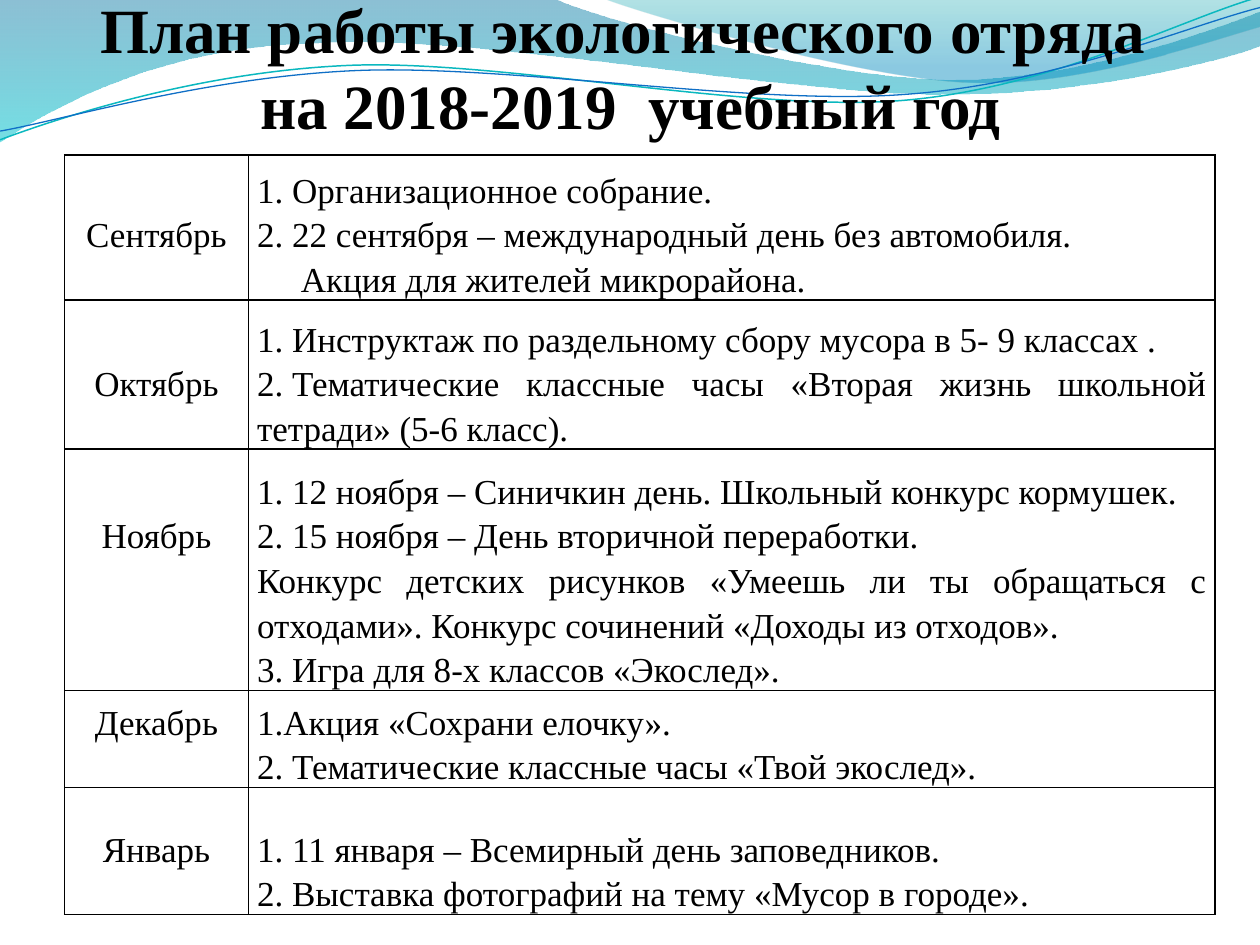
from lxml import etree
from pptx import Presentation
from pptx.dml.color import RGBColor
from pptx.enum import text
from pptx.oxml import ns
from pptx.util import Pt

COLORS = {
    "ink": "000000",
    "paper": "FFFFFF",
    "wave_blue": "0074A1",
    "wave_aqua": "00C6CF",
    "crest_teal": "00A1A9",
    "crest_blue": "008BBF",
    "line_aqua": "0AB8BF",
    "line_blue": "0F6FC6",
}
FONT = "Times New Roman"
BODY_LINE = 25.5
HARD_SPACE = chr(160)

WAVE = [
    (0, 0), (316.8, -0.7),
    (342.7, 12.2, 478.1, 45.4, 545.8, 45.4),
    (614.2, 45.4, 689.8, 18.7, 720, 6.5),
    (720.7, 25.9),
    (707.8, 31.7, 626.4, 54.7, 537.1, 54),
    (447.8, 54, 275, 20.2, 185, 24.5),
    (92.9, 25.9, 33.1, 59.8, -0.7, 81.4),
]
CREST = [
    (344.9, -0.7),
    (366.5, 7.9, 491, 44.6, 553.7, 46.8),
    (616.3, 49.7, 691.9, 23, 720, 15.1),
    (720, 0),
]
AQUA_LINE = [
    (0, 79.9),
    (34.6, 67, 113.8, 41, 199.4, 37.4),
    (284.4, 33.8, 427, 64.1, 513.4, 57.6),
    (599.8, 51.1, 675.4, 10.8, 718.6, -1.4),
]
BLUE_LINE = [
    (0, 74.9),
    (33.8, 69.1, 118.1, 43.9, 203.8, 40.3),
    (290.2, 36.7, 429.8, 60.5, 516.2, 54),
    (601.9, 48.2, 677.5, 15.1, 720, 4.3),
]

COLUMN_WIDTHS = [105, 552.5]
PLAN = [
    ("Сентябрь", 82.9, 1, [
        "1. Организационное собрание.",
        "2. 22 сентября – международный день без автомобиля.",
        ("Акция для жителей микрорайона.", 25),
    ]),
    ("Октябрь", 85.1, 1, [
        "1. Инструктаж по раздельному сбору мусора в 5- 9 классах .",
        "2. Тематические классные часы «Вторая жизнь школьной тетради» (5-6 класс).",
    ]),
    ("Ноябрь", 137.9, 3, [
        "1. 12 ноября – Синичкин день. Школьный конкурс кормушек.",
        "2. 15 ноября – День вторичной переработки.",
        "Конкурс детских рисунков «Умеешь ли ты обращаться с отходами». "
        "Конкурс сочинений «Доходы из отходов».",
        "3. Игра для 8-х классов «Экослед».",
    ]),
    ("Декабрь", 55.4, 1, [
        "1.Акция «Сохрани елочку».",
        "2. Тематические классные часы «Твой экослед».",
    ]),
    ("Январь", 72.6, 1, [
        "1. 11 января – Всемирный день заповедников.",
        "2. Выставка фотографий на тему «Мусор в городе».",
    ]),
]


def color(name):
    return RGBColor.from_string(COLORS[name])


def write(frame, content, first=False, size=20, bold=False, align="CENTER",
          spacing=1.0, indent=0):
    paragraph = frame.paragraphs[0] if first else frame.add_paragraph()
    paragraph.alignment = getattr(text.PP_ALIGN, align)
    paragraph.line_spacing = spacing
    paragraph.space_before = Pt(0)
    if indent:
        properties = paragraph._p.get_or_add_pPr()
        properties.set("marL", str(Pt(indent)))
        properties.set("indent", "0")
    run = paragraph.add_run()
    run.text = content
    run.font.name = FONT
    run.font.size = Pt(size)
    run.font.bold = bold
    run.font.color.rgb = color("ink")


def join_number(content):
    if content[0].isdigit():
        return content.replace(". ", "." + HARD_SPACE, 1)
    return content


def add_outline(slide, outline, close):
    ends = [(Pt(segment[-2]), Pt(segment[-1])) for segment in outline]
    builder = slide.shapes.build_freeform(*ends[0])
    builder.add_line_segments(ends[1:], close=close)
    shape = builder.convert_to_shape()
    shape.shadow.inherit = False
    lines = list(shape.element.iter(ns.qn("a:lnTo")))
    for line, segment in zip(lines, outline[1:]):
        if len(segment) == 6:
            line.tag = ns.qn("a:cubicBezTo")
            line.clear()
            for x, y in zip(segment[::2], segment[1::2]):
                etree.SubElement(line, ns.qn("a:pt"),
                                 x=str(Pt(x) - builder.shape_offset_x),
                                 y=str(Pt(y) - builder.shape_offset_y))
    return shape


def add_wave(slide, outline, stops):
    shape = add_outline(slide, outline, True)
    shape.line.fill.background()
    shape.fill.gradient()
    shape.fill.gradient_angle = 270
    for stop, (position, name, opacity) in zip(shape.fill.gradient_stops, stops):
        stop.position = position
        stop.color.rgb = color(name)
        for element in shape.element.iter(ns.qn("a:srgbClr")):
            if element.get("val") == COLORS[name]:
                etree.SubElement(element, ns.qn("a:alpha"), val=str(opacity * 1000))


def add_wave_line(slide, outline, name, width):
    shape = add_outline(slide, outline, False)
    shape.fill.background()
    shape.line.color.rgb = color(name)
    shape.line.width = Pt(width)


def format_cell(cell, bottom=0):
    cell.margin_left = cell.margin_right = Pt(5)
    cell.margin_top = 0
    cell.margin_bottom = Pt(bottom)
    cell.vertical_anchor = text.MSO_ANCHOR.BOTTOM
    properties = cell._tc.get_or_add_tcPr()
    for side in ("lnL", "lnR", "lnT", "lnB"):
        border = etree.SubElement(properties, ns.qn("a:" + side), w=str(Pt(1)))
        fill = etree.SubElement(border, ns.qn("a:solidFill"))
        etree.SubElement(fill, ns.qn("a:srgbClr"), val=COLORS["ink"])
    cell.fill.solid()
    cell.fill.fore_color.rgb = color("paper")


def add_plan(slide):
    height = sum(row[1] for row in PLAN)
    table = slide.shapes.add_table(len(PLAN), 2, Pt(36.9), Pt(88.6),
                                   Pt(sum(COLUMN_WIDTHS)), Pt(height)).table
    table.first_row = table.horz_banding = False
    for column, width in zip(table.columns, COLUMN_WIDTHS):
        column.width = Pt(width)
    for row, (month, row_height, lines_below, events) in zip(table.rows, PLAN):
        row.height = Pt(row_height)
        month_cell, events_cell = row.cells
        format_cell(month_cell, lines_below * BODY_LINE)
        write(month_cell.text_frame, month, first=True, spacing=1.15)
        format_cell(events_cell)
        for index, event in enumerate(events):
            content, indent = event if isinstance(event, tuple) else (event, 0)
            write(events_cell.text_frame, join_number(content), first=index == 0,
                  align="JUSTIFY", spacing=1.15, indent=indent)


def add_title(slide):
    title = slide.shapes.title
    title.left, title.top, title.width, title.height = (
        Pt(14.4), Pt(-9.4), Pt(691.9), Pt(106.6))
    frame = title.text_frame
    frame.word_wrap = True
    frame.auto_size = text.MSO_AUTO_SIZE.NONE
    frame.vertical_anchor = text.MSO_ANCHOR.TOP
    frame.margin_top = Pt(4.2)
    write(frame, "План работы экологического отряда ", first=True, size=36, bold=True)
    write(frame, "на 2018-2019  учебный год", size=36, bold=True)
    title.element.getparent().append(title.element)


def main():
    presentation = Presentation()
    presentation.slide_width, presentation.slide_height = Pt(720), Pt(540)
    slide = presentation.slides.add_slide(presentation.slide_layouts[5])
    slide.background.fill.solid()
    slide.background.fill.fore_color.rgb = color("paper")
    add_wave(slide, WAVE, [(0, "wave_blue", 45), (1, "wave_aqua", 55)])
    add_wave(slide, CREST, [(0, "crest_teal", 30), (0.8, "crest_blue", 45)])
    add_wave_line(slide, AQUA_LINE, "line_aqua", 0.85)
    add_wave_line(slide, BLUE_LINE, "line_blue", 0.75)
    add_plan(slide)
    add_title(slide)
    presentation.save("out.pptx")


if __name__ == "__main__":
    main()
